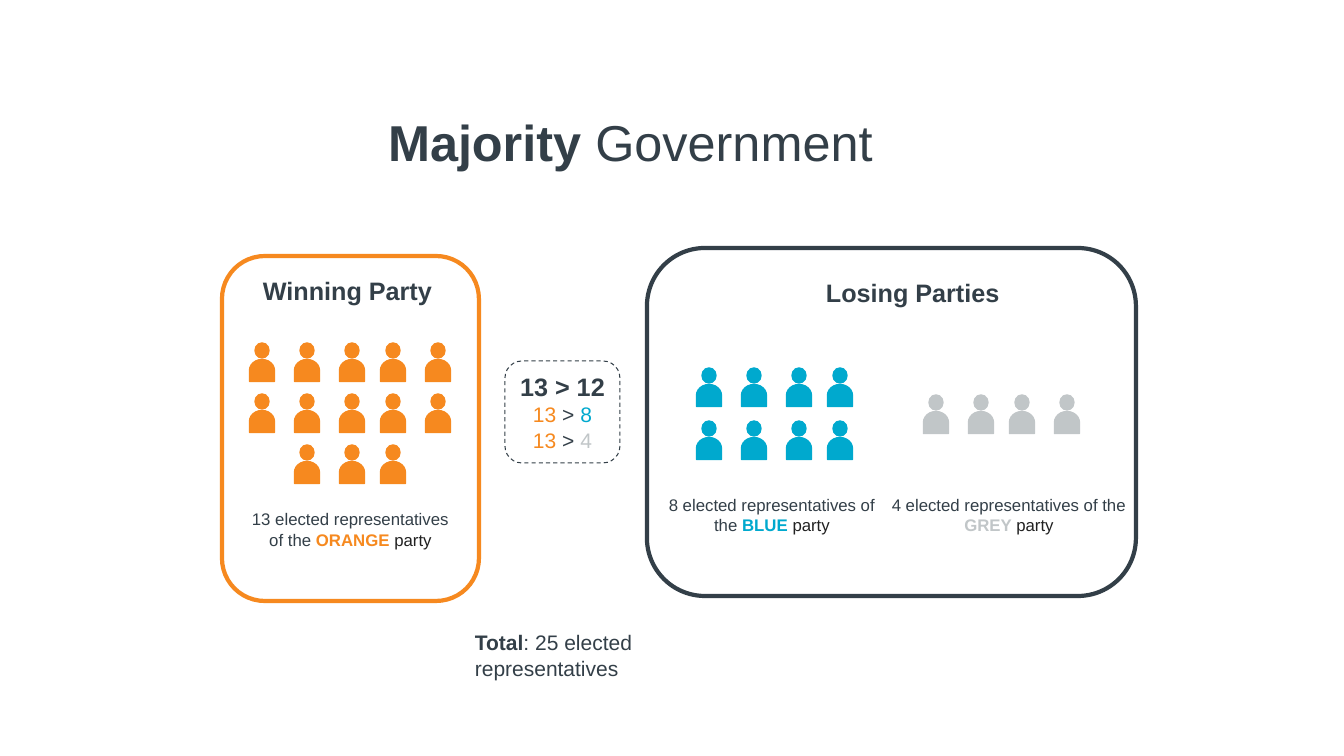
from pptx import Presentation
from pptx.dml.color import RGBColor
from pptx.enum.dml import MSO_LINE
from pptx.enum.shapes import MSO_SHAPE as SHAPE
from pptx.enum.text import MSO_ANCHOR as ANCHOR, PP_ALIGN as ALIGN
from pptx.util import Pt

PX = 914400 / 100.8

DARK = RGBColor(0x33, 0x3F, 0x48)
BLACK = RGBColor(0x21, 0x21, 0x21)
WHITE = RGBColor(0xFF, 0xFF, 0xFF)
ORANGE = RGBColor(0xF6, 0x89, 0x1F)
BLUE = RGBColor(0x00, 0xA9, 0xCE)
GREY = RGBColor(0xC1, 0xC6, 0xC8)

# Horizontal offsets of the people standing in a row
COLUMNS = [0, 45, 90, 131, 176]


def px(*values):
    return [round(v * PX) for v in values]


def write(tf, paragraphs, size, align=ALIGN.LEFT):
    """Each paragraph is a list of (text, colour, bold) runs."""
    for i, runs in enumerate(paragraphs):
        p = tf.paragraphs[0] if i == 0 else tf.add_paragraph()
        p.alignment = align
        for text, color, bold in runs:
            r = p.add_run()
            r.text = text
            r.font.name = "Arial"
            r.font.size = Pt(size)
            r.font.bold = bold
            r.font.color.rgb = color


def add_text(s, box, paragraphs, size, align=ALIGN.LEFT):
    tf = s.shapes.add_textbox(*px(*box)).text_frame
    tf.word_wrap = True
    write(tf, paragraphs, size, align)


def add_shape(shapes, kind, box, fill, line, width):
    sp = shapes.add_shape(kind, *px(*box))
    sp.shadow.inherit = False
    if fill is None:
        sp.fill.background()
    else:
        sp.fill.solid()
        sp.fill.fore_color.rgb = fill
    sp.line.color.rgb = line
    sp.line.width = Pt(width)
    return sp


def add_person(shapes, center, top, color):
    add_shape(shapes, SHAPE.OVAL, (center - 7, top, 14, 15), color, color, 1)
    body = add_shape(shapes, SHAPE.FLOWCHART_DELAY,
                     (center - 11, top + 15, 22, 25), color, color, 1)
    body.rotation = 270


def add_crowd(s, left, top, pitch, rows, color):
    """Each row lists the columns that are occupied."""
    group = s.shapes.add_group_shape()
    for i, columns in enumerate(rows):
        for column in columns:
            offset = COLUMNS[column] - COLUMNS[rows[0][0]]
            add_person(group.shapes, left + offset, top + i * pitch, color)


def add_title(s, box):
    title = s.shapes.title
    title.left, title.top, title.width, title.height = px(*box)
    tf = title.text_frame
    tf.word_wrap = True
    tf.vertical_anchor = ANCHOR.TOP
    write(tf, [[("Majority ", DARK, True), ("Government", DARK, False)]], 36)


def add_winner(s, box):
    x, y, w, h = box
    panel = add_shape(s.shapes, SHAPE.ROUNDED_RECTANGLE, box, WHITE, ORANGE, 3)
    tf = panel.text_frame
    tf.word_wrap = True
    tf.vertical_anchor = ANCHOR.BOTTOM
    tf.margin_bottom = px(39)[0]
    write(tf, [[("13 elected representatives of the ", DARK, False),
                ("ORANGE ", ORANGE, True), ("party", BLACK, False)]],
          12, ALIGN.CENTER)
    add_text(s, (x + 31, y + 14, 192, 40),
             [[("Winning Party", DARK, True)]], 18)
    add_crowd(s, x + 40, y + 87, 51,
              [range(5), range(5), range(1, 4)], ORANGE)


def add_losers(s, box):
    x, y, w, h = box
    add_shape(s.shapes, SHAPE.ROUNDED_RECTANGLE, box, None, DARK, 3)
    add_text(s, (x + 169, y + 24, 196, 40),
             [[("Losing Parties", DARK, True)]], 18)
    add_crowd(s, x + 62, y + 120, 53, [range(4), range(4)], BLUE)
    add_crowd(s, x + 289, y + 147, 53, [range(1, 5)], GREY)
    captions = [
        (-127, "8 elected representatives of", "the ", "BLUE ", BLUE),
        (110, "4 elected representatives of the", "", "GREY ", GREY),
    ]
    for dx, first, lead, party, color in captions:
        second = [(lead, DARK, False)] if lead else []
        second += [(party, color, True), ("party", BLACK, False)]
        add_text(s, (x + dx, y + 242, 504, 50),
                 [[(first, DARK, False)], second], 12, ALIGN.CENTER)


def add_comparison(s, box):
    sp = add_shape(s.shapes, SHAPE.ROUNDED_RECTANGLE, box, None, DARK, 0.75)
    sp.line.dash_style = MSO_LINE.DASH
    tf = sp.text_frame
    tf.word_wrap = False
    tf.vertical_anchor = ANCHOR.MIDDLE
    rows = [[("13", ORANGE, False), (" > ", DARK, False), (seats, color, False)]
            for seats, color in (("8", BLUE), ("4", GREY))]
    write(tf, [[("13 > 12", DARK, True)]] + rows, 15, ALIGN.CENTER)
    tf.paragraphs[0].runs[0].font.size = Pt(18)


def main():
    prs = Presentation()
    prs.slide_width, prs.slide_height = px(1344, 756)
    s = prs.slides.add_slide(prs.slide_layouts[5])

    add_title(s, (378, 106, 543, 107))
    add_losers(s, (647, 248, 489, 348))
    add_winner(s, (222, 256, 257, 345))
    add_comparison(s, (505, 361, 115, 102))

    # Total seats
    add_text(s, (465, 625, 257, 61),
             [[("Total", DARK, True),
               (": 25 elected representatives", DARK, False)]], 15)

    prs.save("out.pptx")


if __name__ == "__main__":
    main()
